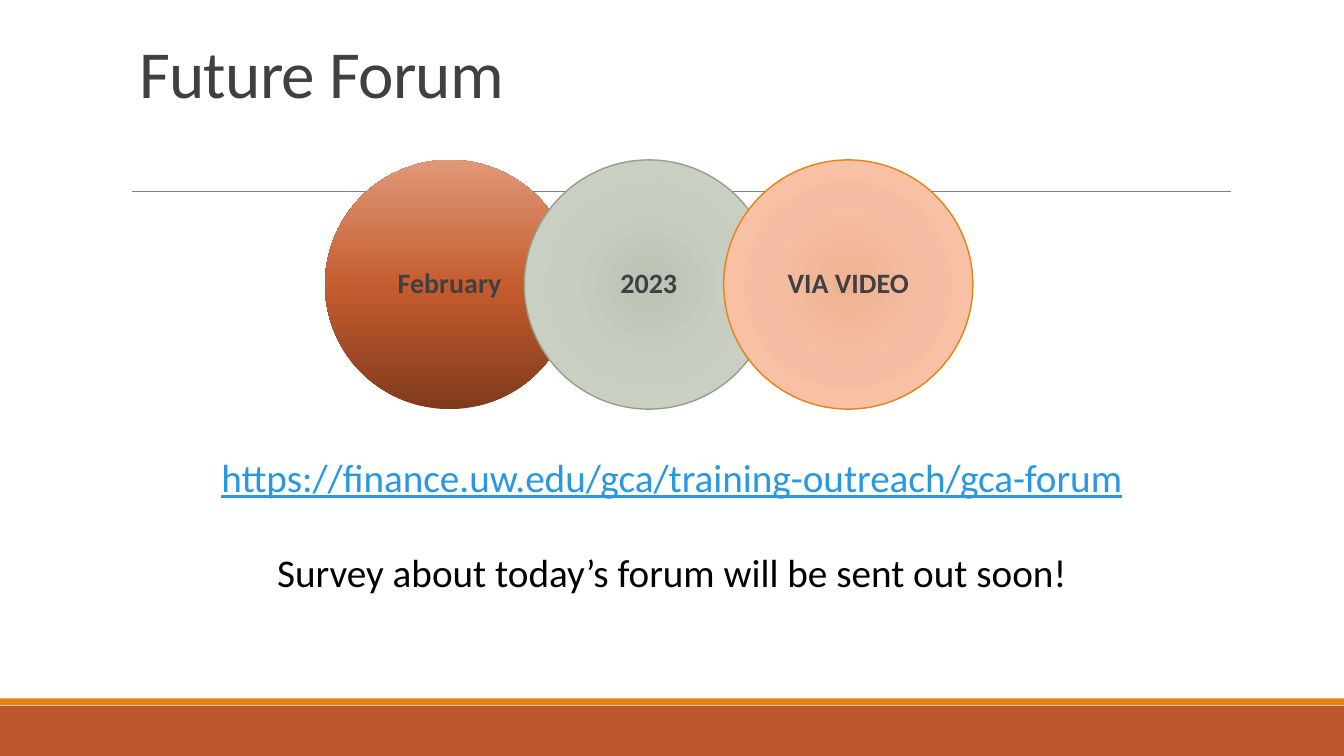
from pptx import Presentation, oxml
from pptx import util as u
from pptx.dml import color
from pptx.enum import shapes, text
from pptx.oxml import ns

COLORS = {
    "title": "404040", "body": "000000", "link": "2998E3", "rule": "808080",
    "band": "BD582C", "stripe": "E48312", "sage": "94A088",
}
FONT = "Calibri"
SLIDE_W, SLIDE_H = 33.87, 19.05

LINEAR = '<a:lin ang="16200000" scaled="0"/>'
RADIAL = ('<a:path path="circle"><a:fillToRect l="100000" t="100000" '
          'r="100000" b="100000"/></a:path>')

# Label, gradient stops (percent, colour), gradient direction, outline
CIRCLES = [
    ("February", [(0, "7F3B1D"), (48, "C45B2E"), (100, "E09878")], LINEAR, None),
    ("2023", [(0, "BBC3B5"), (45, "C7CDC1"), (100, "CDD4C7")], RADIAL, "sage"),
    ("VIA VIDEO", [(0, "F0B191"), (45, "F5BEA4"), (100, "FDC3A8")], RADIAL, "stripe"),
]


def rgb(name):
    return color.RGBColor.from_string(COLORS[name])


def add_run(paragraph, words, size, tint, bold=False, underline=False):
    run = paragraph.add_run()
    run.text = words
    run.font.name = FONT
    run.font.size = u.Pt(size)
    run.font.bold = bold
    run.font.underline = underline
    run.font.color.rgb = rgb(tint)
    return run


def add_bar(slide, top, height, tint):
    bar = slide.shapes.add_shape(shapes.MSO_SHAPE.RECTANGLE, 0, u.Cm(top),
                                 u.Cm(SLIDE_W), u.Cm(height))
    bar.shadow.inherit = False
    bar.fill.solid()
    bar.fill.fore_color.rgb = rgb(tint)
    bar.line.fill.background()


def add_frame(slide, left, top, width):
    """Footer bars and the rule under the title."""
    add_bar(slide, 17.78, SLIDE_H - 17.78, "band")
    add_bar(slide, 17.6, 0.17, "stripe")
    rule = slide.shapes.add_connector(shapes.MSO_CONNECTOR.STRAIGHT, u.Cm(left),
                                      u.Cm(top), u.Cm(left + width), u.Cm(top))
    rule.line.color.rgb = rgb("rule")
    rule.line.width = u.Pt(0.5)
    oxml.xmlchem = None
    rule._element.spPr.append(
        oxml.parse_xml(f'<a:effectLst {ns.nsdecls("a")}/>'))


def set_title(slide, left, top, width, height):
    title = slide.shapes.title
    title.left, title.top = u.Cm(left), u.Cm(top)
    title.width, title.height = u.Cm(width), u.Cm(height)
    frame = title.text_frame
    frame.vertical_anchor = text.MSO_ANCHOR.BOTTOM
    frame.auto_size = text.MSO_AUTO_SIZE.NONE
    paragraph = frame.paragraphs[0]
    paragraph.alignment = text.PP_ALIGN.LEFT
    paragraph.line_spacing = 0.85
    run = add_run(paragraph, "Future Forum", 48, "title")
    run.font._element.set("spc", "-50")


def fill_gradient(shape, stops, direction):
    stop_list = "".join(
        f'<a:gs pos="{percent * 1000}"><a:srgbClr val="{tint}"/></a:gs>'
        for percent, tint in stops)
    shape._element.spPr.insert(2, oxml.parse_xml(
        f'<a:gradFill {ns.nsdecls("a")} rotWithShape="1">'
        f'<a:gsLst>{stop_list}</a:gsLst>{direction}</a:gradFill>'))


def add_circles(slide, left, top, diameter):
    """A row of circles, each overlapping the one before by a fifth."""
    for index, (label, stops, direction, outline) in enumerate(CIRCLES):
        circle = slide.shapes.add_shape(
            shapes.MSO_SHAPE.OVAL, u.Cm(left + index * diameter * 0.8),
            u.Cm(top), u.Cm(diameter), u.Cm(diameter))
        circle.shadow.inherit = False
        fill_gradient(circle, stops, direction)
        if outline:
            circle.line.color.rgb = rgb(outline)
            circle.line.width = u.Pt(1)
        else:
            circle.line.fill.background()
        frame = circle.text_frame
        frame.word_wrap = True
        frame.vertical_anchor = text.MSO_ANCHOR.MIDDLE
        frame.margin_left = frame.margin_right = u.Cm(0.35)
        frame.margin_top = frame.margin_bottom = u.Cm(0.08)
        paragraph = frame.paragraphs[0]
        paragraph.alignment = text.PP_ALIGN.CENTER
        paragraph.line_spacing = 0.9
        add_run(paragraph, label, 20, "title", bold=True)


def add_details(slide, left, top, width, height):
    """Forum address and survey notice."""
    frame = slide.shapes.add_textbox(u.Cm(left), u.Cm(top), u.Cm(width),
                                     u.Cm(height)).text_frame
    frame.word_wrap = True
    address = frame.paragraphs[0]
    add_run(address, "https://finance.uw.edu/gca/training-outreach/gca-forum",
            28, "link", underline=True)
    survey = frame.add_paragraph()
    survey.space_before = u.Pt(34)
    add_run(survey, "Survey about today’s forum will be sent out soon!", 28, "body")
    for paragraph in (address, survey):
        paragraph.alignment = text.PP_ALIGN.CENTER


def main():
    deck = Presentation()
    deck.slide_width, deck.slide_height = u.Cm(SLIDE_W), u.Cm(SLIDE_H)
    slide = deck.slides.add_slide(deck.slide_layouts[5])
    add_frame(slide, left=3.33, top=4.82, width=27.68)
    set_title(slide, left=3.25, top=0.89, width=26.19, height=2.06)
    add_circles(slide, left=8.19, top=4.03, diameter=6.28)
    add_details(slide, left=3.53, top=11.3, width=26.8, height=3.84)
    deck.save("out.pptx")


if __name__ == "__main__":
    main()
